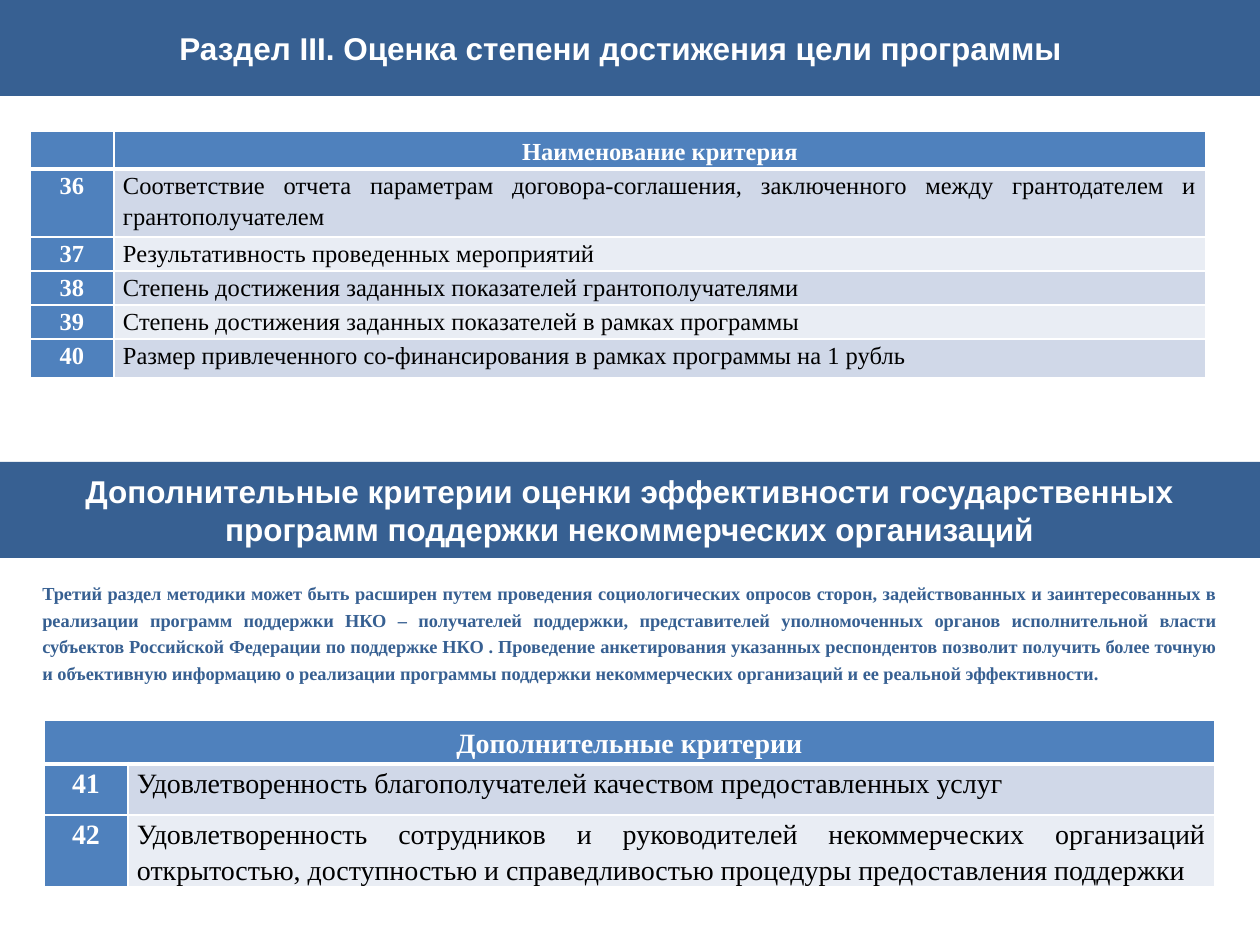
"""Build the slide with programme goal criteria and additional criteria."""
from lxml import etree
from pptx import Presentation, util as u
from pptx.dml.color import RGBColor
from pptx.enum import shapes, text
from pptx.oxml.ns import qn

PX = 914400 / 126
COLORS = {"banner": "376092", "head": "4F81BD", "odd": "D0D8E8",
          "even": "E9EDF4", "white": "FFFFFF", "black": "000000"}
SERIF = "Times New Roman"
CENTER, JUSTIFY = text.PP_ALIGN.CENTER, text.PP_ALIGN.JUSTIFY
GOAL_CRITERIA = [
    "Соответствие отчета параметрам договора-соглашения, заключенного между "
    "грантодателем и грантополучателем",
    "Результативность проведенных мероприятий",
    "Степень достижения заданных показателей грантополучателями",
    "Степень достижения заданных показателей в рамках программы",
    "Размер привлеченного со-финансирования в рамках программы на 1 рубль",
]
EXTRA_CRITERIA = [
    "Удовлетворенность благополучателей качеством предоставленных услуг",
    "Удовлетворенность сотрудников и руководителей некоммерческих организаций "
    "открытостью, доступностью и справедливостью процедуры предоставления поддержки",
]
SURVEY_NOTE = (
    "Третий раздел методики может быть расширен путем проведения социологических "
    "опросов сторон, задействованных и заинтересованных в реализации программ "
    "поддержки НКО – получателей поддержки, представителей уполномоченных органов "
    "исполнительной власти субъектов Российской Федерации по поддержке НКО . "
    "Проведение анкетирования указанных респондентов позволит получить более точную "
    "и объективную информацию о реализации программы поддержки некоммерческих "
    "организаций и ее реальной эффективности."
)


def px(n):
    return u.Emu(round(n * PX))


def rgb(name):
    return RGBColor.from_string(COLORS[name])


def write(tf, value, size, font, color, align, bold=True, spacing=None):
    p = tf.paragraphs[0]
    p.alignment = align
    p.line_spacing = spacing
    r = p.add_run()
    r.text = value
    r.font.size, r.font.name, r.font.bold = u.Pt(size), font, bold
    r.font.color.rgb = rgb(color)
    return p


def add_banner(s, y, title, right_inset=13):
    sp = s.shapes.add_shape(shapes.MSO_SHAPE.RECTANGLE, 0, px(y), px(1260), px(96))
    sp.shadow.inherit = False
    sp.fill.solid()
    sp.fill.fore_color.rgb = rgb("banner")
    sp.line.fill.background()
    tf = sp.text_frame
    tf.word_wrap = True
    tf.vertical_anchor = text.MSO_ANCHOR.MIDDLE
    tf.margin_right = px(right_inset)
    write(tf, title, 18, "Arial", "white", CENTER)


def add_note(s, x, y, w, h, value):
    tf = s.shapes.add_textbox(px(x), px(y), px(w), px(h)).text_frame
    tf.word_wrap = True
    p = write(tf, value, 10.5, SERIF, "banner", JUSTIFY, spacing=1.2)
    p.space_before = u.Pt(2)


def set_borders(cell, top, bottom):
    tcPr = cell._tc.get_or_add_tcPr()
    widths = {"a:lnL": 1, "a:lnR": 1, "a:lnT": top, "a:lnB": bottom}
    for i, (tag, width) in enumerate(widths.items()):
        ln = etree.Element(qn(tag), w=str(u.Pt(width)))
        fill = etree.SubElement(ln, qn("a:solidFill"))
        etree.SubElement(fill, qn("a:srgbClr"), val=COLORS["white"])
        tcPr.insert(i, ln)


def fill_cell(cell, value, size, fill, color="white", align=CENTER, bold=True):
    cell.margin_left = cell.margin_right = px(9)
    cell.margin_top = cell.margin_bottom = 0
    cell.fill.solid()
    cell.fill.fore_color.rgb = rgb(fill)
    write(cell.text_frame, value, size, SERIF, color, align, bold, 1.15)


def add_criteria(s, x, y, widths, heights, size, header, first, criteria):
    frame = s.shapes.add_table(len(heights), 2, px(x), px(y),
                               px(sum(widths)), px(sum(heights)))
    table = frame.table
    for col, w in zip(table.columns, widths):
        col.width = px(w)
    for row, h in zip(table.rows, heights):
        row.height = px(h)
    for cell, value in zip(table.rows[0].cells, header):
        fill_cell(cell, value, size, "head")
        cell.vertical_anchor = text.MSO_ANCHOR.MIDDLE
        set_borders(cell, 1, 3)
    for i, criterion in enumerate(criteria, 1):
        number, name = table.rows[i].cells
        fill_cell(number, str(first + i - 1), size, "head")
        fill_cell(name, criterion, size, "odd" if i % 2 else "even",
                  "black", JUSTIFY, False)
        for cell in (number, name):
            set_borders(cell, 3 if i == 1 else 1, 1)
    return table


def main():
    prs = Presentation()
    prs.slide_width, prs.slide_height = px(1260), px(945)
    s = prs.slides.add_slide(prs.slide_layouts[6])
    add_banner(s, 0, "Раздел III. Оценка степени достижения цели программы", 31)
    add_banner(s, 462, "Дополнительные критерии оценки эффективности государственных "
                       "программ поддержки некоммерческих организаций")
    extra = add_criteria(s, 44, 720, [84, 1087], [44, 51, 71], 16,
                         ["Дополнительные критерии"], 41, EXTRA_CRITERIA)
    extra.cell(0, 0).merge(extra.cell(0, 1))
    add_note(s, 30, 572, 1200, 117, SURVEY_NOTE)
    add_criteria(s, 30, 131, [84, 1092], [34, 68, 34, 34, 34, 39], 14,
                 ["", "Наименование критерия"], 36, GOAL_CRITERIA)
    prs.save("out.pptx")


if __name__ == "__main__":
    main()
